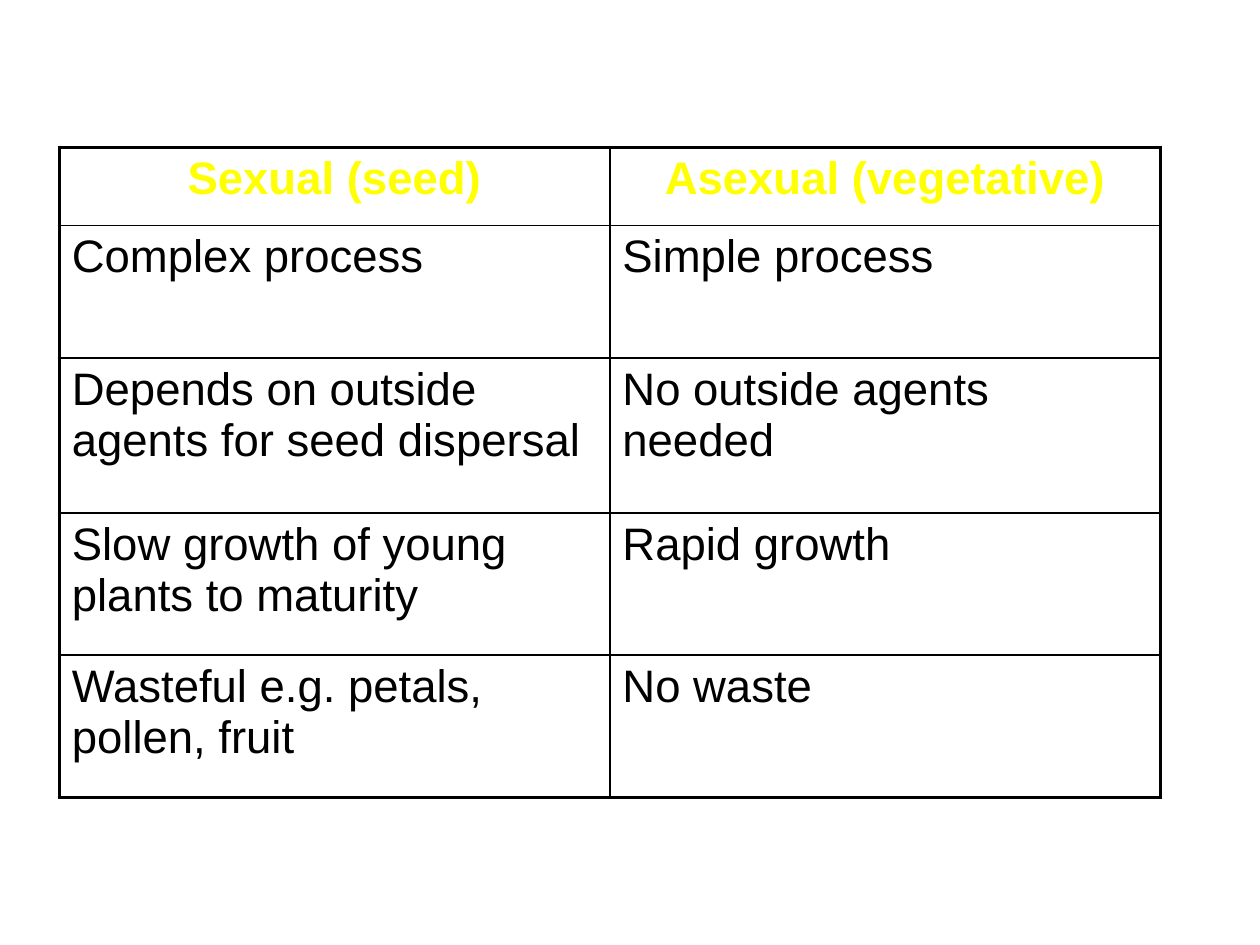
from lxml import etree
from pptx import Presentation
from pptx import util as u
from pptx.dml.color import RGBColor
from pptx.enum import text
from pptx.oxml import ns

BLACK = RGBColor(0x00, 0x00, 0x00)
YELLOW = RGBColor(0xFF, 0xFF, 0x00)
OUTER, INNER = u.Pt(2.25), u.Pt(1)

COMPARISON = [
    ("Sexual (seed)", "Asexual (vegetative)"),
    ("Complex process", "Simple process"),
    ("Depends on outside agents for seed dispersal", "No outside agents needed"),
    ("Slow growth of young plants to maturity", "Rapid growth"),
    ("Wasteful e.g. petals, pollen, fruit", "No waste"),
]
ROW_HEIGHTS = [0.62, 1.05, 1.23, 1.13, 1.13]
COLUMN_WIDTH = 4.37
HEADING = {"bold": True, "size": u.Pt(26), "name": "Arial"}
BODY = {**HEADING, "bold": False}


def add_border(cell, side, width):
    """Draw one side (L, R, T or B) of a cell as a solid black line."""
    line = etree.SubElement(cell._tc.get_or_add_tcPr(), ns.qn(f"a:ln{side}"), w=str(width))
    fill = etree.SubElement(line, ns.qn("a:solidFill"))
    etree.SubElement(fill, ns.qn("a:srgbClr"), val=str(BLACK))


prs = Presentation()
prs.slide_width, prs.slide_height = u.Inches(10), u.Inches(7.5)
slide = prs.slides.add_slide(prs.slide_layouts[6])

table = slide.shapes.add_table(
    len(COMPARISON), 2, u.Inches(0.47), u.Inches(1.17),
    u.Inches(2 * COLUMN_WIDTH), u.Inches(sum(ROW_HEIGHTS))).table
table.first_row = table.horz_banding = False
for column in table.columns:
    column.width = u.Inches(COLUMN_WIDTH)

last_row = len(COMPARISON) - 1
for r, (traits, height) in enumerate(zip(COMPARISON, ROW_HEIGHTS)):
    table.rows[r].height = u.Inches(height)
    for c, trait in enumerate(traits):
        cell = table.cell(r, c)
        on_edge = {"L": c == 0, "R": c == 1, "T": r == 0, "B": r == last_row}
        for side, outer in on_edge.items():
            add_border(cell, side, OUTER if outer else INNER)
        cell.fill.background()

        paragraph = cell.text_frame.paragraphs[0]
        paragraph.alignment = text.PP_ALIGN.LEFT if r else text.PP_ALIGN.CENTER
        space_before = etree.SubElement(paragraph._p.get_or_add_pPr(), ns.qn("a:spcBef"))
        etree.SubElement(space_before, ns.qn("a:spcPct"), val="20000")
        run = paragraph.add_run()
        run.text = trait
        for attribute, value in (BODY if r else HEADING).items():
            setattr(run.font, attribute, value)
        run.font.color.rgb = BLACK if r else YELLOW

prs.save("out.pptx")
